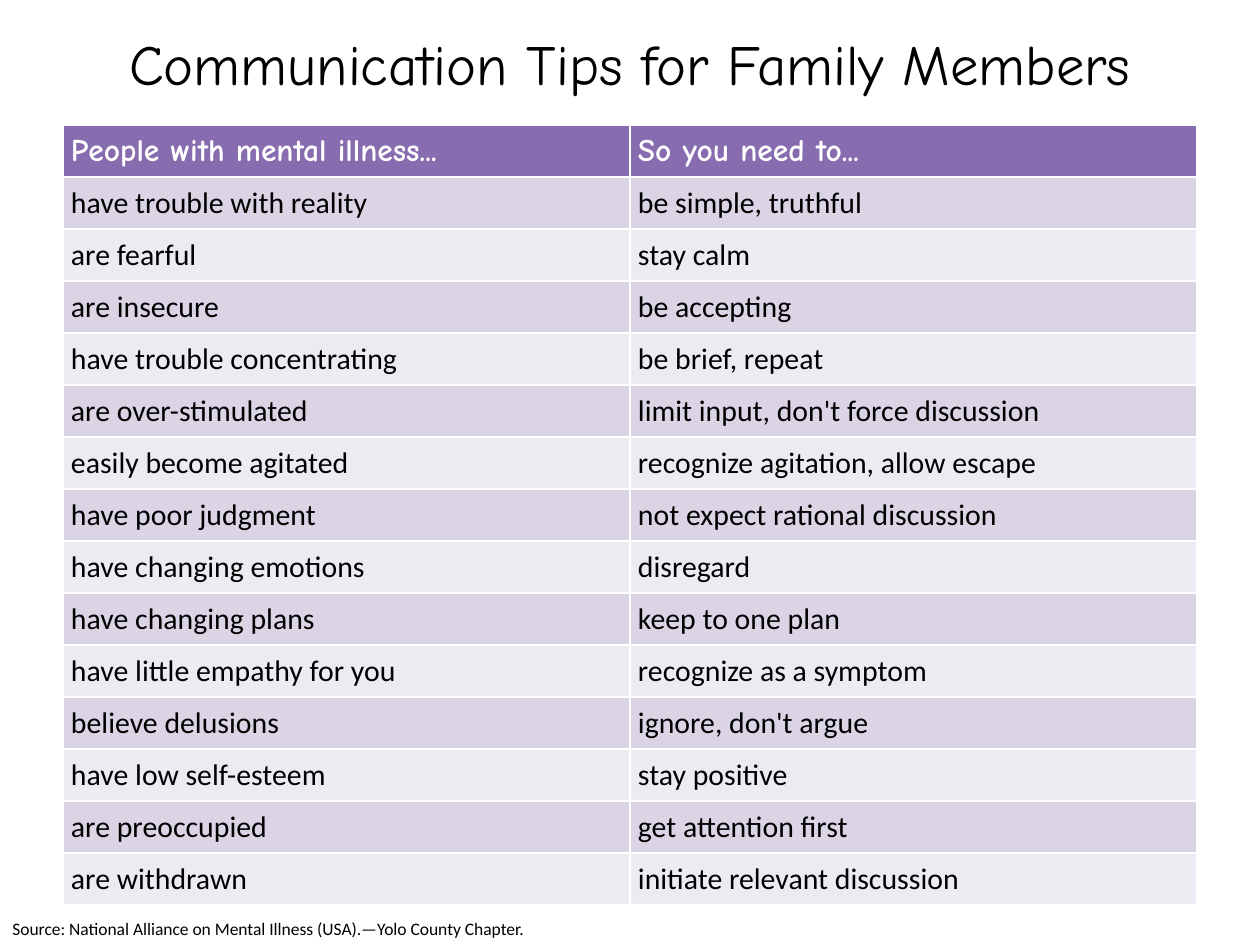
"""Build a slide with a two-column table of communication tips."""
from dataclasses import dataclass

from lxml import etree
from pptx import Presentation
from pptx import util as u
from pptx.dml.color import RGBColor
from pptx.enum import text
from pptx.oxml import ns

TITLE = "Communication Tips for Family Members"
SOURCE = "Source: National Alliance on Mental Illness (USA).—Yolo County Chapter."
HEADER = ("People with mental illness...", "So you need to...")
TIPS = [
    ("have trouble with reality", "be simple, truthful"),
    ("are fearful", "stay calm"),
    ("are insecure", "be accepting"),
    ("have trouble concentrating", "be brief, repeat"),
    ("are over-stimulated", "limit input, don't force discussion"),
    ("easily become agitated", "recognize agitation, allow escape"),
    ("have poor judgment", "not expect rational discussion"),
    ("have changing emotions", "disregard"),
    ("have changing plans", "keep to one plan"),
    ("have little empathy for you", "recognize as a symptom"),
    ("believe delusions", "ignore, don't argue"),
    ("have low self-esteem", "stay positive"),
    ("are preoccupied", "get attention first"),
    ("are withdrawn", "initiate relevant discussion"),
]


@dataclass(frozen=True)
class Theme:
    heading: str = "Comic Neue"
    body: str = "Calibri"
    ink: str = "000000"
    white: str = "FFFFFF"
    header: str = "886CB0"
    bands: tuple = ("DAD4E4", "EDEBF2")
    title_size: float = 32.4
    header_size: int = 18
    cell_size: int = 17
    source_size: int = 10
    rule: int = 1


THEME = Theme()
SCALE = u.Inches(1) / 126
MARGIN, TABLE_TOP, TABLE_WIDTH, ROW_HEIGHT, CELL_INSET = 63, 125, 1134, 52, 8


def px(n):
    return u.Emu(round(n * SCALE))


def add_run(p, words, font, size, color, bold=False):
    r = p.add_run()
    r.text = words
    r.font.name, r.font.size, r.font.bold = font, u.Pt(size), bold
    r.font.color.rgb = RGBColor.from_string(color)


def add_borders(cell):
    tc_pr = cell._tc.get_or_add_tcPr()
    for side in "LRTB":
        line = etree.SubElement(tc_pr, ns.qn(f"a:ln{side}"), w=str(u.Pt(THEME.rule)))
        fill = etree.SubElement(line, ns.qn("a:solidFill"))
        etree.SubElement(fill, ns.qn("a:srgbClr"), val=THEME.white)


def fill_cell(cell, words, fill, **style):
    add_borders(cell)
    cell.fill.solid()
    cell.fill.fore_color.rgb = RGBColor.from_string(fill)
    cell.vertical_anchor = text.MSO_ANCHOR.MIDDLE
    cell.margin_left = cell.margin_right = px(CELL_INSET)
    cell.margin_top = cell.margin_bottom = px(CELL_INSET - 1)
    add_run(cell.text_frame.paragraphs[0], words, **style)


def add_title(s):
    sp = s.shapes.title
    sp.left, sp.top, sp.width, sp.height = px(MARGIN), px(0), px(TABLE_WIDTH), px(135)
    tf = sp.text_frame
    tf.vertical_anchor = text.MSO_ANCHOR.MIDDLE
    p = tf.paragraphs[0]
    p.alignment, p.line_spacing = text.PP_ALIGN.CENTER, 0.9
    add_run(p, TITLE, THEME.heading, THEME.title_size, THEME.ink)


def add_tips(s):
    rows = [HEADER, *TIPS]
    table = s.shapes.add_table(len(rows), len(HEADER), px(MARGIN), px(TABLE_TOP),
                               px(TABLE_WIDTH), px(ROW_HEIGHT * len(rows))).table
    header_style = dict(font=THEME.heading, size=THEME.header_size,
                        color=THEME.white, bold=True)
    body_style = dict(font=THEME.body, size=THEME.cell_size, color=THEME.ink)
    for i, row in enumerate(rows):
        fill = THEME.bands[(i - 1) % 2] if i else THEME.header
        style = body_style if i else header_style
        for j, words in enumerate(row):
            fill_cell(table.cell(i, j), words, fill, **style)


def add_source(s):
    tf = s.shapes.add_textbox(px(0), px(911), px(547), px(34)).text_frame
    tf.word_wrap = False
    tf.auto_size = text.MSO_AUTO_SIZE.SHAPE_TO_FIT_TEXT
    tf.vertical_anchor = text.MSO_ANCHOR.BOTTOM
    add_run(tf.paragraphs[0], SOURCE, THEME.body, THEME.source_size, THEME.ink)


def main():
    prs = Presentation()
    prs.slide_width, prs.slide_height = px(1260), px(945)
    s = prs.slides.add_slide(prs.slide_layouts[5])
    add_title(s)
    add_tips(s)
    add_source(s)
    prs.save("out.pptx")


if __name__ == "__main__":
    main()
